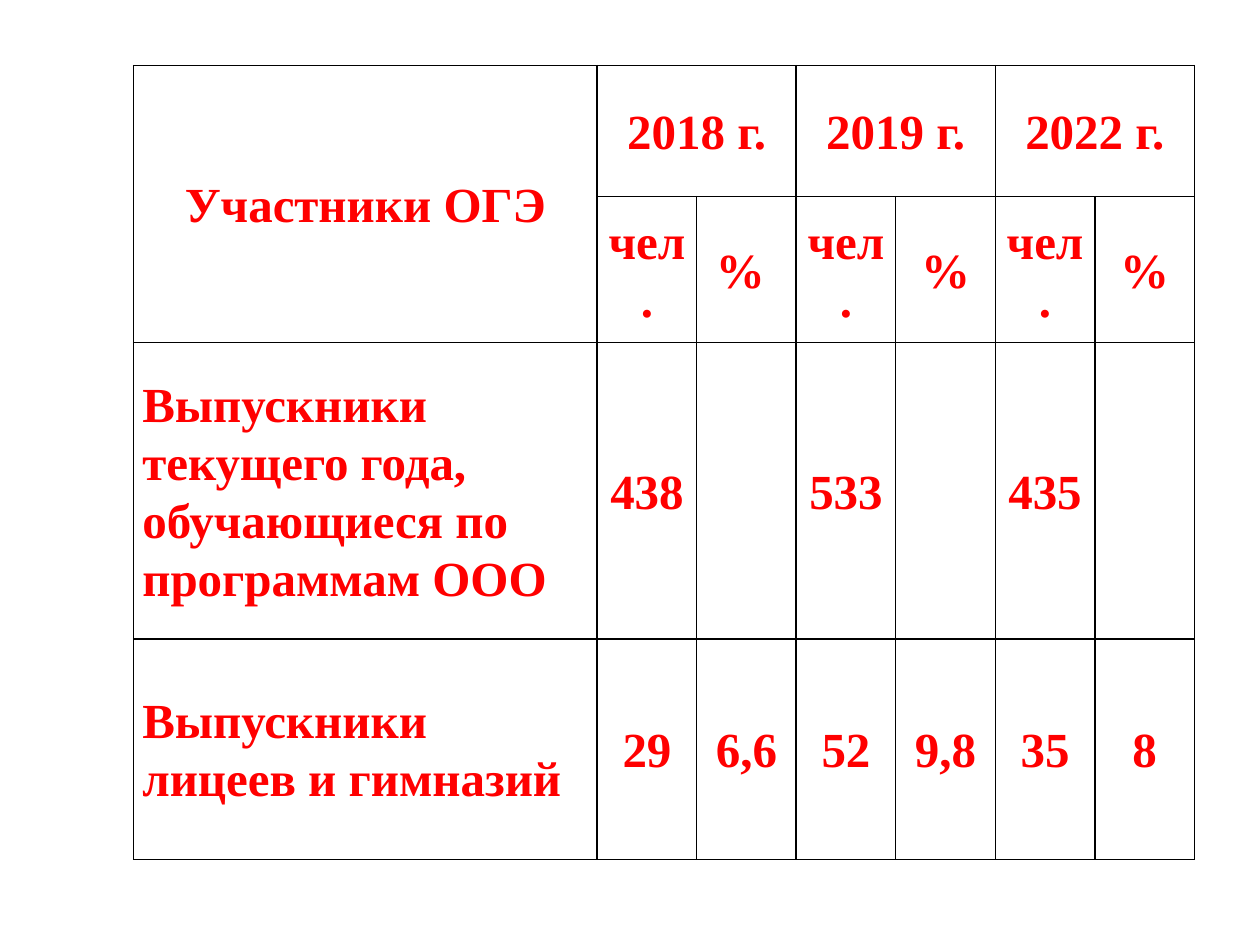
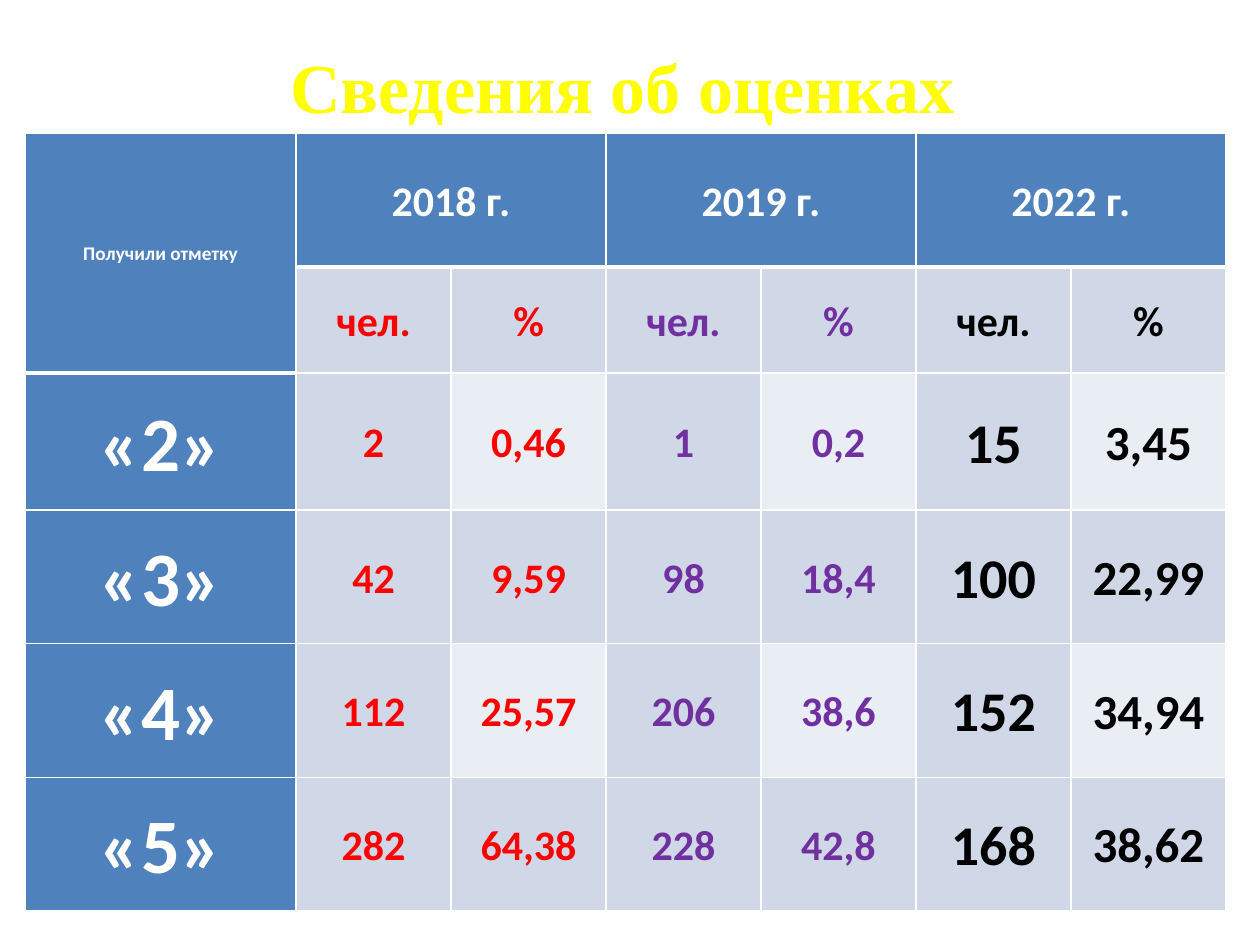
from dataclasses import dataclass

from lxml import etree
from pptx import Presentation
from pptx.dml.color import RGBColor
from pptx.enum.text import MSO_ANCHOR, MSO_AUTO_SIZE, PP_ALIGN
from pptx.oxml.ns import qn
from pptx.util import Inches, Pt

LEFT, CENTER = PP_ALIGN.LEFT, PP_ALIGN.CENTER
MIDDLE = MSO_ANCHOR.MIDDLE
GROW = MSO_AUTO_SIZE.SHAPE_TO_FIT_TEXT
TITLE_ONLY, BLANK = 5, 6


@dataclass(frozen=True)
class Theme:
    serif: str = "Times New Roman"
    sans: str = "Calibri"
    red: str = "FF0000"
    yellow: str = "FFFF00"
    purple: str = "7030A0"
    black: str = "000000"
    white: str = "FFFFFF"
    header: str = "4F81BD"
    band_dark: str = "D0D8E8"
    band_light: str = "E9EDF4"
    title_size: int = 40
    mark_size: int = 44
    people_size: int = 32
    large_size: int = 28
    table_size: int = 24
    corner_size: int = 11
    line_spacing: float = 1.07
    thin: int = 1
    thick: int = 3


THEME = Theme()


@dataclass
class CellLook:
    font: str
    size: int
    color: str
    border: str
    fill: str = ""
    align: int = CENTER
    top: int = THEME.thin
    bottom: int = THEME.thin


class SlideMaker:
    def __init__(self, theme):
        self.theme = theme
        self.deck = Presentation()
        self.deck.slide_width, self.deck.slide_height = Inches(10), Inches(7.5)
        self.page = None

    def add_page(self, layout):
        self.page = self.deck.slides.add_slide(self.deck.slide_layouts[layout])

    def add_span(self, para, text, font, size, color):
        span = para.add_run()
        span.text = text
        span.font.name, span.font.size, span.font.bold = font, Pt(size), True
        span.font.color.rgb = RGBColor.from_string(color)

    def title(self, text, left, top, width, height, indent):
        box = self.page.shapes.title
        box.left, box.top = Inches(left), Inches(top)
        box.width, box.height = Inches(width), Inches(height)
        frame = box.text_frame
        frame.word_wrap, frame.auto_size = True, GROW
        frame.vertical_anchor = MIDDLE
        para = frame.paragraphs[0]
        para.alignment = CENTER
        para._p.get_or_add_pPr().set("indent", str(Inches(indent)))
        self.add_span(para, text, self.theme.serif, self.theme.title_size, self.theme.yellow)

    def border(self, cell, side, color, width):
        line = etree.SubElement(cell._tc.get_or_add_tcPr(), qn(f"a:ln{side}"), w=str(Pt(width)))
        fill = etree.SubElement(line, qn("a:solidFill"))
        etree.SubElement(fill, qn("a:srgbClr"), val=color)

    def format_cell(self, cell, text, look):
        cell.margin_left = cell.margin_right = Inches(0.07)
        cell.margin_top = cell.margin_bottom = 0
        cell.vertical_anchor = MIDDLE
        widths = {"L": self.theme.thin, "R": self.theme.thin, "T": look.top, "B": look.bottom}
        for side, width in widths.items():
            self.border(cell, side, look.border, width)
        if look.fill:
            cell.fill.solid()
            cell.fill.fore_color.rgb = RGBColor.from_string(look.fill)
        else:
            cell.fill.background()
        if text:
            para = cell.text_frame.paragraphs[0]
            para.alignment, para.line_spacing = look.align, self.theme.line_spacing
            self.add_span(para, text, look.font, look.size, look.color)

    def table(self, left, top, widths, heights, rows, look_of):
        """Draw a table with a two-row header: a tall corner and years over pairs."""
        table = self.page.shapes.add_table(
            len(heights), len(widths), Inches(left), Inches(top),
            Inches(sum(widths)), Inches(sum(heights))).table
        table.first_row = table.horz_banding = False
        for column, width in zip(table.columns, widths):
            column.width = Inches(width)
        for row, height in zip(table.rows, heights):
            row.height = Inches(height)
        for r, texts in enumerate(rows):
            for c, text in enumerate(texts):
                self.format_cell(table.cell(r, c), text, look_of(r, c))
        table.cell(0, 0).merge(table.cell(1, 0))
        for c in range(1, len(widths), 2):
            table.cell(0, c).merge(table.cell(0, c + 1))


def year_row(corner):
    return [corner, "2018 г.", "", "2019 г.", "", "2022 г.", ""]


def participant_look(r, c):
    align = LEFT if c == 0 and r >= 2 else CENTER
    return CellLook(THEME.serif, THEME.large_size, THEME.red, THEME.black, align=align)


def grade_look(r, c):
    look = CellLook(THEME.sans, THEME.table_size, THEME.white, THEME.white, THEME.header)
    # Thick rule under the header
    if r == 0 or (r, c) == (1, 0):
        look.bottom = THEME.thick
    if (r == 1 and c) or (r, c) == (2, 0):
        look.top = THEME.thick
    # Header corner and marks
    if c == 0:
        look.size = THEME.mark_size if r >= 2 else THEME.corner_size
    # One text colour per year, light fill for percentages in even rows
    elif r:
        look.color = (THEME.red, THEME.purple, THEME.black)[(c - 1) // 2]
        is_percent = c % 2 == 0
        look.fill = THEME.band_light if is_percent and r % 2 == 0 else THEME.band_dark
        if c >= 5 and r >= 2:
            look.size = THEME.large_size if is_percent else THEME.people_size
    return look


def main():
    maker = SlideMaker(THEME)

    # Exam participants
    maker.add_page(BLANK)
    maker.table(1.06, 0.52, [3.68] + [0.79] * 6, [1.04, 1.16, 2.35, 1.75], [
        year_row("Участники ОГЭ"),
        ["", "чел.", "% ", "чел.", "%", "чел.", "%"],
        ["Выпускники текущего года, обучающиеся по программам ООО",
         "438", "", "533", "", "435", ""],
        ["Выпускники лицеев и гимназий", "29", "6,6", "52", "9,8", "35", "8"],
    ], participant_look)

    # Grades
    maker.add_page(TITLE_ONLY)
    maker.title("Сведения об оценках", 1.61, 0.29, 6.17, 0.77, indent=0.49)
    maker.table(0.2, 1.06, [2.15] + [1.23] * 6, [1.06, 0.84, 1.09] + [1.06] * 3, [
        year_row("Получили отметку"),
        [""] + ["чел.", "%"] * 3,
        ["«2»", "2", "0,46", "1", "0,2", "15", "3,45"],
        ["«3»", "42", "9,59", "98", "18,4", "100", "22,99"],
        ["«4»", "112", "25,57", "206", "38,6", "152", "34,94"],
        ["«5»", "282", "64,38", "228", "42,8", "168", "38,62"],
    ], grade_look)

    maker.deck.save("out.pptx")


if __name__ == "__main__":
    main()
